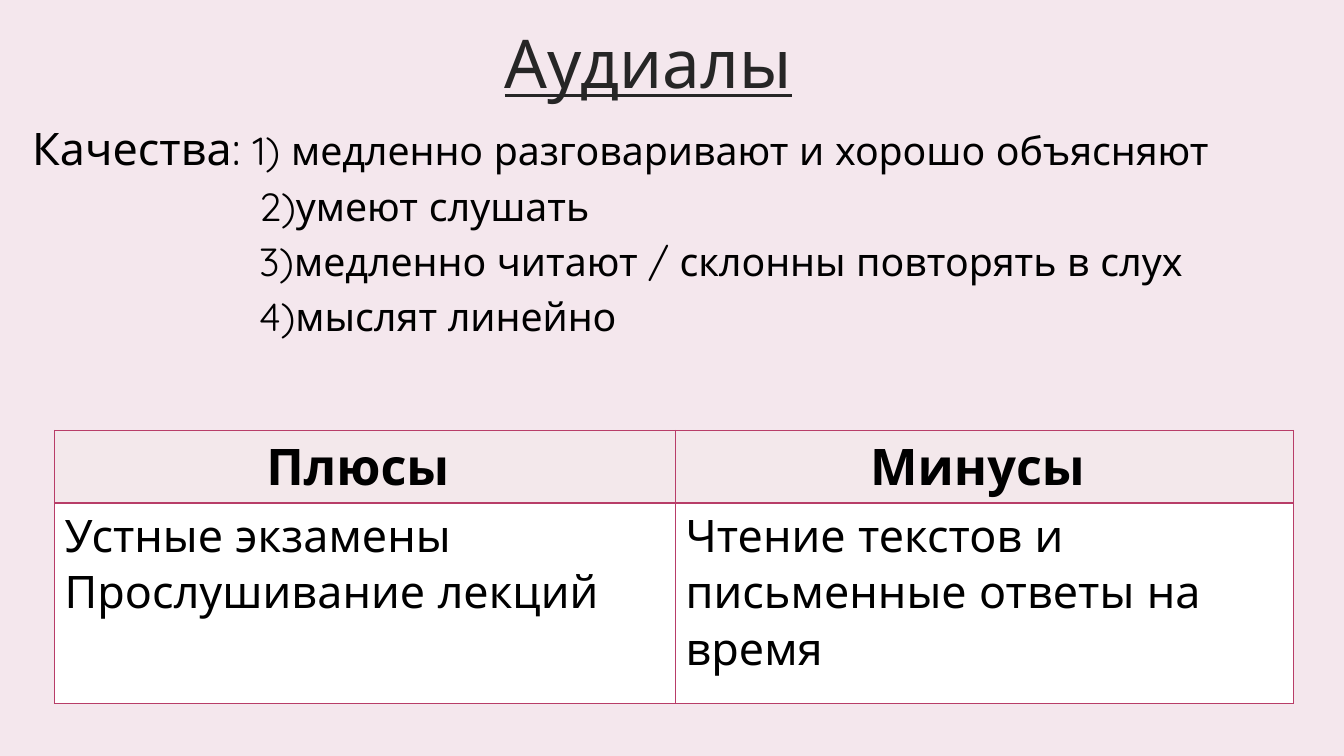
import pptx
import pptx.util
import pptx.dml.color
import pptx.enum.text
import pptx.oxml
from pptx.oxml.ns import qn, nsdecls

Inches = pptx.util.Inches
Pt = pptx.util.Pt
ALIGN = pptx.enum.text.PP_ALIGN
ANCHOR = pptx.enum.text.MSO_ANCHOR

FONT = "Quicksand"
COLORS = {
    "back": "F4E7ED",
    "title": "262626",
    "text": "000000",
    "head": "F3E8EB",
    "cell": "FFFFFF",
    "edge": "B83D68",
}
TRAITS = [
    "1) медленно разговаривают и хорошо объясняют",
    "2)умеют слушать",
    "3)медленно читают / склонны повторять в слух",
    "4)мыслят линейно",
]
ROWS = [
    ["Плюсы ", "Минусы "],
    ["Устные экзамены\nПрослушивание лекций",
     "Чтение текстов и письменные ответы на время"],
]


def color(name):
    return pptx.dml.color.RGBColor.from_string(COLORS[name])


def style(run, size, tone="text", bold=False):
    font = run.font
    font.name = FONT
    font.size = Pt(size)
    font.bold = bold
    font.color.rgb = color(tone)


def add_box(slide, left, top, width, height):
    box = slide.shapes.add_textbox(
        Inches(left), Inches(top), Inches(width), Inches(height))
    box.text_frame.word_wrap = True
    return box.text_frame


def add_title(slide, left, top, width, height):
    frame = add_box(slide, left, top, width, height)
    frame.vertical_anchor = ANCHOR.MIDDLE
    para = frame.paragraphs[0]
    para.alignment = ALIGN.CENTER
    para.line_spacing = 0.9
    for text, under in (("Аудиалы", True), (" ", False)):
        run = para.add_run()
        run.text = text
        style(run, 48, "title")
        run.font.underline = under


def add_traits(slide, left, top, width, height):
    frame = add_box(slide, left, top, width, height)
    frame.margin_left = Inches(0.07)
    for i, trait in enumerate(TRAITS):
        para = frame.paragraphs[0] if i == 0 else frame.add_paragraph()
        para.line_spacing = 0.9
        para.space_before = Pt(9)
        if i == 0:
            label = para.add_run()
            label.text = "Качества: "
            style(label, 32)
        else:
            # Later items line up under the first number
            para._p.get_or_add_pPr().set("marL", str(Inches(2.25)))
        run = para.add_run()
        run.text = trait
        style(run, 28)


def set_edges(cell):
    props = cell._tc.get_or_add_tcPr()
    for i, side in enumerate(("lnL", "lnR", "lnT", "lnB")):
        props.insert(i, pptx.oxml.parse_xml(
            f'<a:{side} {nsdecls("a")} w="{Pt(1)}"><a:solidFill>'
            f'<a:srgbClr val="{COLORS["edge"]}"/></a:solidFill></a:{side}>'))


def add_table(slide, left, top, width, height):
    table = slide.shapes.add_table(
        len(ROWS), 2, Inches(left), Inches(top),
        Inches(width), Inches(height)).table
    head, first = 0.72, 6.16
    for row, size in zip(table.rows, (head, height - head)):
        row.height = Inches(size)
    for col, size in zip(table.columns, (first, width - first)):
        col.width = Inches(size)
    for r, texts in enumerate(ROWS):
        for c, text in enumerate(texts):
            cell = table.cell(r, c)
            cell.text_frame.text = text
            cell.fill.solid()
            cell.fill.fore_color.rgb = color("cell" if r else "head")
            set_edges(cell)
            for para in cell.text_frame.paragraphs:
                para.alignment = ALIGN.LEFT if r else ALIGN.CENTER
                style(para.runs[0], 32 if r else 36, bold=r == 0)


def main():
    deck = pptx.Presentation()
    deck.slide_width = Inches(13.33)
    deck.slide_height = Inches(7.5)
    slide = deck.slides.add_slide(deck.slide_layouts[6])
    slide.background.fill.solid()
    slide.background.fill.fore_color.rgb = color("back")

    add_title(slide, 1.02, 0.24, 11, 0.85)
    add_traits(slide, 0.25, 1.21, 12.73, 2.6)
    add_table(slide, 0.54, 4.27, 12.29, 2.71)
    deck.save("out.pptx")


if __name__ == "__main__":
    main()
